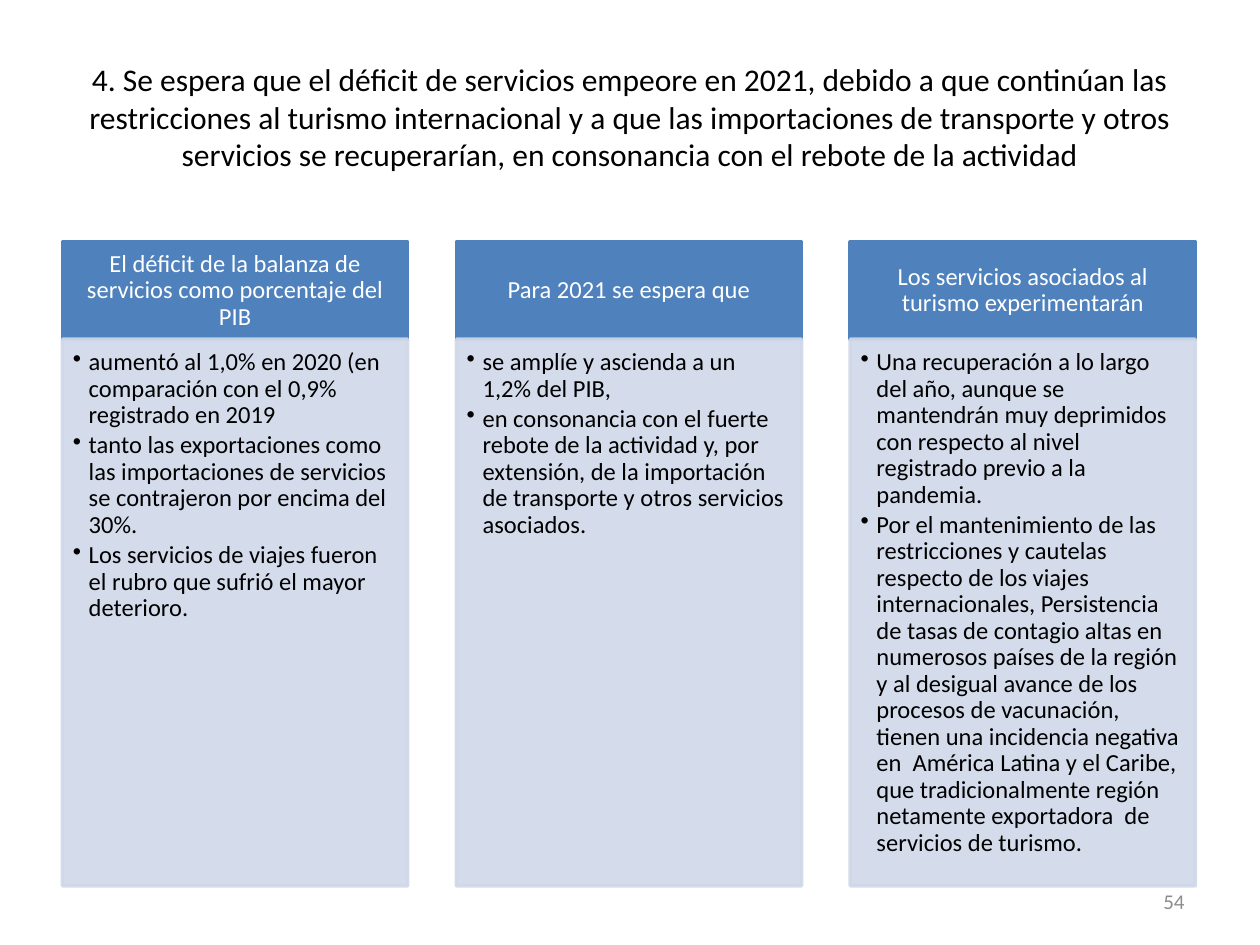
import pptx
import pptx.util
import pptx.dml.color
import pptx.enum.shapes
import pptx.enum.text
import pptx.oxml
import pptx.oxml.ns

Cm = pptx.util.Cm
Pt = pptx.util.Pt
ALIGN = pptx.enum.text.PP_ALIGN
ANCHOR = pptx.enum.text.MSO_ANCHOR

TITLE = ("4. Se espera que el déficit de servicios empeore en 2021, debido a que "
         "continúan las restricciones al turismo internacional y a que las "
         "importaciones de transporte y otros servicios se recuperarían, en "
         "consonancia con el rebote de la actividad")
PAGE = "54"
COLUMNS = [
    ("El déficit de la balanza de servicios como porcentaje del PIB", [
        "aumentó al 1,0% en 2020 (en comparación con el 0,9% registrado en 2019",
        "tanto las exportaciones como las importaciones de servicios se "
        "contrajeron por encima del 30%.",
        "Los servicios de viajes fueron el rubro que sufrió el mayor deterioro.",
    ]),
    ("Para 2021 se espera que", [
        "se amplíe y ascienda a un 1,2% del PIB,",
        "en consonancia con el fuerte rebote de la actividad y, por extensión, "
        "de la importación de transporte y otros servicios asociados.",
    ]),
    ("Los servicios asociados al turismo experimentarán", [
        "Una recuperación a lo largo del año, aunque se mantendrán muy "
        "deprimidos con respecto al nivel registrado previo a la pandemia.",
        "Por el mantenimiento de las restricciones y cautelas respecto de los "
        "viajes internacionales, Persistencia de tasas de contagio altas en "
        "numerosos países de la región y al desigual avance de los procesos de "
        "vacunación, tienen una incidencia negativa en  América Latina y el "
        "Caribe, que tradicionalmente región netamente exportadora  de "
        "servicios de turismo.",
    ]),
]

COLORS = {"head": "4F81BD", "body": "D0D8E8", "dark": "000000",
          "light": "FFFFFF", "page": "8C8C8C"}

LEFT, TOP = 1.26, 4.88
WIDTH, STEP = 6.96, 7.94
HEAD_H, BODY_H = 1.96, 11.02

HEAD_FRAME = {"vertical_anchor": ANCHOR.MIDDLE,
              "margin_left": Cm(0.28), "margin_right": Cm(0.28),
              "margin_top": Cm(0.16), "margin_bottom": Cm(0.16)}
BODY_FRAME = {"vertical_anchor": ANCHOR.TOP,
              "margin_left": Cm(0.21), "margin_right": Cm(0.28),
              "margin_top": Cm(0.21), "margin_bottom": Cm(0.3)}
MID_FRAME = {"vertical_anchor": ANCHOR.MIDDLE}
HEAD_PARA = {"alignment": ALIGN.CENTER, "line_spacing": 0.9, "space_after": Pt(4.9)}
BODY_PARA = {"alignment": ALIGN.LEFT, "line_spacing": 0.9, "space_after": Pt(2.1),
             "level": 1}


def rgb(name):
    return pptx.dml.color.RGBColor.from_string(COLORS[name])


def apply(target, values):
    for key, value in values.items():
        setattr(target, key, value)


def place(shape, *box):
    apply(shape, dict(zip(("left", "top", "width", "height"), map(Cm, box))))


def write(shape, texts, frame, para, size, color):
    area = shape.text_frame
    apply(area, {"word_wrap": True, "auto_size": pptx.enum.text.MSO_AUTO_SIZE.NONE})
    apply(area, frame)
    for i, text in enumerate(texts):
        line = area.paragraphs[0] if i == 0 else area.add_paragraph()
        apply(line, para)
        run = line.add_run()
        run.text = text
        apply(run.font, {"name": "Calibri", "size": Pt(size)})
        run.font.color.rgb = rgb(color)


def add_panel(slide, box, color):
    panel = slide.shapes.add_shape(pptx.enum.shapes.MSO_SHAPE.RECTANGLE, *map(Cm, box))
    panel.shadow.inherit = False
    panel.fill.solid()
    panel.fill.fore_color.rgb = rgb(color)
    panel.line.color.rgb = rgb(color)
    panel.line.width = Pt(2)
    return panel


def fade(panel, percent):
    """Set the opacity of the panel's fill and line."""
    for tint in panel.fill._xPr.iter(pptx.oxml.ns.qn("a:srgbClr")):
        alpha = pptx.oxml.parse_xml(f"<a:alpha {pptx.oxml.ns.nsdecls('a')}/>")
        alpha.set("val", str(percent * 1000))
        tint.append(alpha)


def add_bullets(panel):
    for line in panel.text_frame.paragraphs:
        props = line._p.get_or_add_pPr()
        props.set("marL", str(Cm(0.32)))
        props.set("indent", str(Cm(-0.32)))
        props.append(pptx.oxml.parse_xml(
            f"<a:buChar {pptx.oxml.ns.nsdecls('a')} char='•'/>"))


def main():
    deck = pptx.Presentation()
    apply(deck, {"slide_width": Cm(25.4), "slide_height": Cm(19.05)})
    slide = deck.slides.add_slide(deck.slide_layouts[5])

    title = slide.shapes.title
    place(title, 1.27, 0.76, 22.86, 3.18)
    write(title, [TITLE], MID_FRAME, {"alignment": ALIGN.CENTER}, 18, "dark")

    for i, (head, points) in enumerate(COLUMNS):
        x = LEFT + i * STEP
        panel = add_panel(slide, (x, TOP, WIDTH, HEAD_H), "head")
        write(panel, [head], HEAD_FRAME, HEAD_PARA, 14, "light")
        panel = add_panel(slide, (x, TOP + HEAD_H, WIDTH, BODY_H), "body")
        fade(panel, 90)
        write(panel, points, BODY_FRAME, BODY_PARA, 14, "dark")
        add_bullets(panel)

    page = slide.shapes.add_textbox(Cm(18.21), Cm(17.65), Cm(5.92), Cm(1.02))
    write(page, [PAGE], MID_FRAME, {"alignment": ALIGN.RIGHT}, 12, "page")

    deck.save("out.pptx")


if __name__ == "__main__":
    main()
